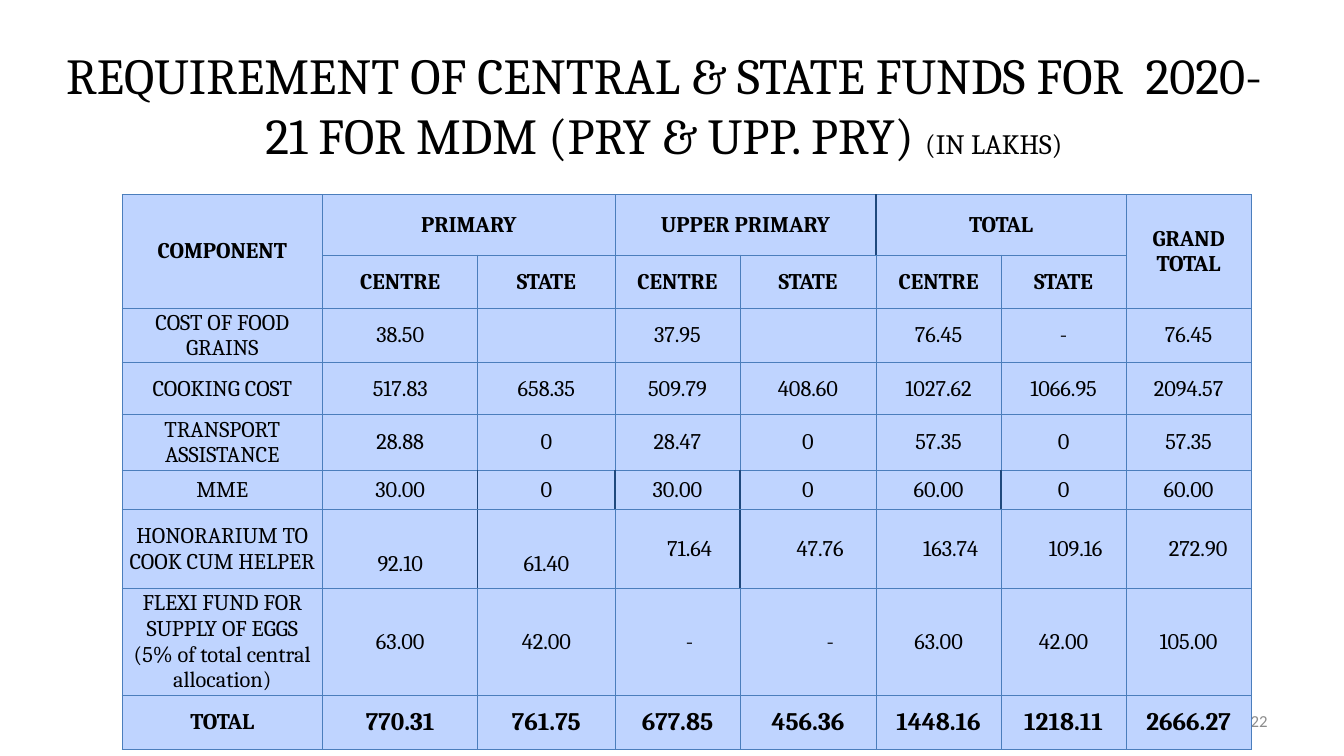
from dataclasses import dataclass
from lxml import etree
from pptx import Presentation
from pptx.dml.color import RGBColor
from pptx.enum.text import MSO_ANCHOR as Anchor, PP_ALIGN as Align
from pptx.oxml.ns import qn
from pptx.util import Inches, Pt

FILL, GRID, DARK, BLACK, GREY = "BFD4FF", "4B7EBC", "1F497D", "000000", "8C8C8C"
COLUMN_WIDTHS = [1.99, 1.54, 1.36, 1.24, 1.35, 1.24, 1.24, 1.24]
PAIR = ["CENTRE", "STATE"]
HEADING_MERGES = [(0, 0, 1, 0), (0, 1, 0, 2), (0, 3, 0, 4), (0, 5, 0, 6), (0, 7, 1, 7)]
# Cells whose right-hand edge is darker
DARK_EDGES = {(0, 4), (5, 1), (5, 2), (5, 3), (5, 5), (6, 1), (6, 3)}
# Extra insets that push single figures right or down
LEFT_INSETS = {(6, 3): 0.25, (6, 4): 0.25, (6, 5): 0.25, (6, 6): 0.25, (6, 7): 0.2,
               (7, 3): 0.25, (7, 4): 0.45}
TOP_INSETS = {(6, 1): 0.3, (6, 2): 0.3}


@dataclass
class FundRow:
    height: float
    cells: list[str]
    bold: bool = False
    figure_size: int = 16


FUND_ROWS = [
    FundRow(0.6, ["COMPONENT", "PRIMARY", "", "UPPER PRIMARY", "", "TOTAL", "", "GRAND TOTAL"], True),
    FundRow(0.52, ["", *PAIR * 3, ""], True),
    FundRow(0.52, ["COST OF FOOD GRAINS", "38.50", "", "37.95", "", "76.45", "-", "76.45"]),
    FundRow(0.52, ["COOKING COST", "517.83", "658.35", "509.79", "408.60",
                   "1027.62", "1066.95", "2094.57"]),
    FundRow(0.55, ["TRANSPORT ASSISTANCE", "28.88", "0", "28.47", "0", "57.35", "0", "57.35"]),
    FundRow(0.39, ["MME", "30.00", "0", "30.00", "0", "60.00", "0", "60.00"]),
    FundRow(0.78, ["HONORARIUM TO COOK CUM HELPER", "92.10", "61.40", "71.64", "47.76",
                   "163.74", "109.16", "272.90"]),
    FundRow(1.02, ["FLEXI FUND FOR SUPPLY OF EGGS (5% of total central allocation)",
                   "63.00", "42.00", "-", "-", "63.00", "42.00", "105.00"]),
    FundRow(0.53, ["TOTAL", "770.31", "761.75", "677.85", "456.36",
                   "1448.16", "1218.11", "2666.27"], True, 18),
]


def colour(value: str) -> RGBColor:
    return RGBColor.from_string(value)


def add_span(para, text: str, *, size: float, font: str = "Cambria",
             ink: str = BLACK, bold: bool = False, align=Align.CENTER) -> None:
    para.alignment = align
    span = para.add_run()
    span.text = text
    span.font.name, span.font.size, span.font.bold = font, Pt(size), bold
    span.font.color.rgb = colour(ink)


def add_box(page, left: float, top: float, width: float, height: float):
    box = page.shapes.add_textbox(Inches(left), Inches(top), Inches(width), Inches(height))
    box.text_frame.word_wrap = True
    box.text_frame.vertical_anchor = Anchor.MIDDLE
    return box.text_frame.paragraphs[0]


def set_border(cell, side: str, ink: str) -> None:
    width = Pt(1 if ink == DARK else 0.75)
    line = etree.SubElement(cell._tc.get_or_add_tcPr(), qn(f"a:ln{side}"), w=str(width))
    solid = etree.SubElement(line, qn("a:solidFill"))
    etree.SubElement(solid, qn("a:srgbClr"), val=ink)


def style_cell(cell, row: int, column: int) -> None:
    for side in "LRTB":
        edge = (row, column - 1) if side == "L" else (row, column)
        set_border(cell, side, DARK if side in "LR" and edge in DARK_EDGES else GRID)
    cell.fill.solid()
    cell.fill.fore_color.rgb = colour(FILL)
    cell.vertical_anchor = Anchor.MIDDLE
    inset = 0.07 if column == 0 or row < 2 else 0.01
    cell.margin_left = Inches(LEFT_INSETS.get((row, column), inset))
    cell.margin_right = Inches(inset)
    cell.margin_top = Inches(TOP_INSETS.get((row, column), 0))
    cell.margin_bottom = 0


def add_fund_table(page) -> None:
    frame = page.shapes.add_table(
        len(FUND_ROWS), len(COLUMN_WIDTHS), Inches(1.21), Inches(1.93),
        Inches(sum(COLUMN_WIDTHS)), Inches(sum(row.height for row in FUND_ROWS)))
    table = frame.table
    table.first_row = table.horz_banding = False
    for column, width in zip(table.columns, COLUMN_WIDTHS):
        column.width = Inches(width)
    for row, fund in enumerate(FUND_ROWS):
        table.rows[row].height = Inches(fund.height)
        for column, text in enumerate(fund.cells):
            cell = table.cell(row, column)
            style_cell(cell, row, column)
            if text:
                add_span(cell.text_frame.paragraphs[0], text, bold=fund.bold,
                         size=fund.figure_size if column else 16)
    for top, left, bottom, right in HEADING_MERGES:
        table.cell(top, left).merge(table.cell(bottom, right))


def main() -> None:
    deck = Presentation()
    deck.slide_width, deck.slide_height = Inches(13.33), Inches(7.5)
    page = deck.slides.add_slide(deck.slide_layouts[6])

    # Page number
    add_span(add_box(page, 9.56, 6.95, 3.11, 0.4), "22",
             size=12, font="Calibri", ink=GREY, align=Align.RIGHT)

    # Title
    title = add_box(page, 0.5, 0.41, 12.17, 1.25)
    add_span(title, "REQUIREMENT OF CENTRAL & STATE FUNDS FOR  2020-21 "
                    "FOR MDM (PRY & UPP. PRY) ", size=36)
    add_span(title, "(IN LAKHS)", size=20)

    # Funds by component
    add_fund_table(page)
    deck.save("out.pptx")


if __name__ == "__main__":
    main()
